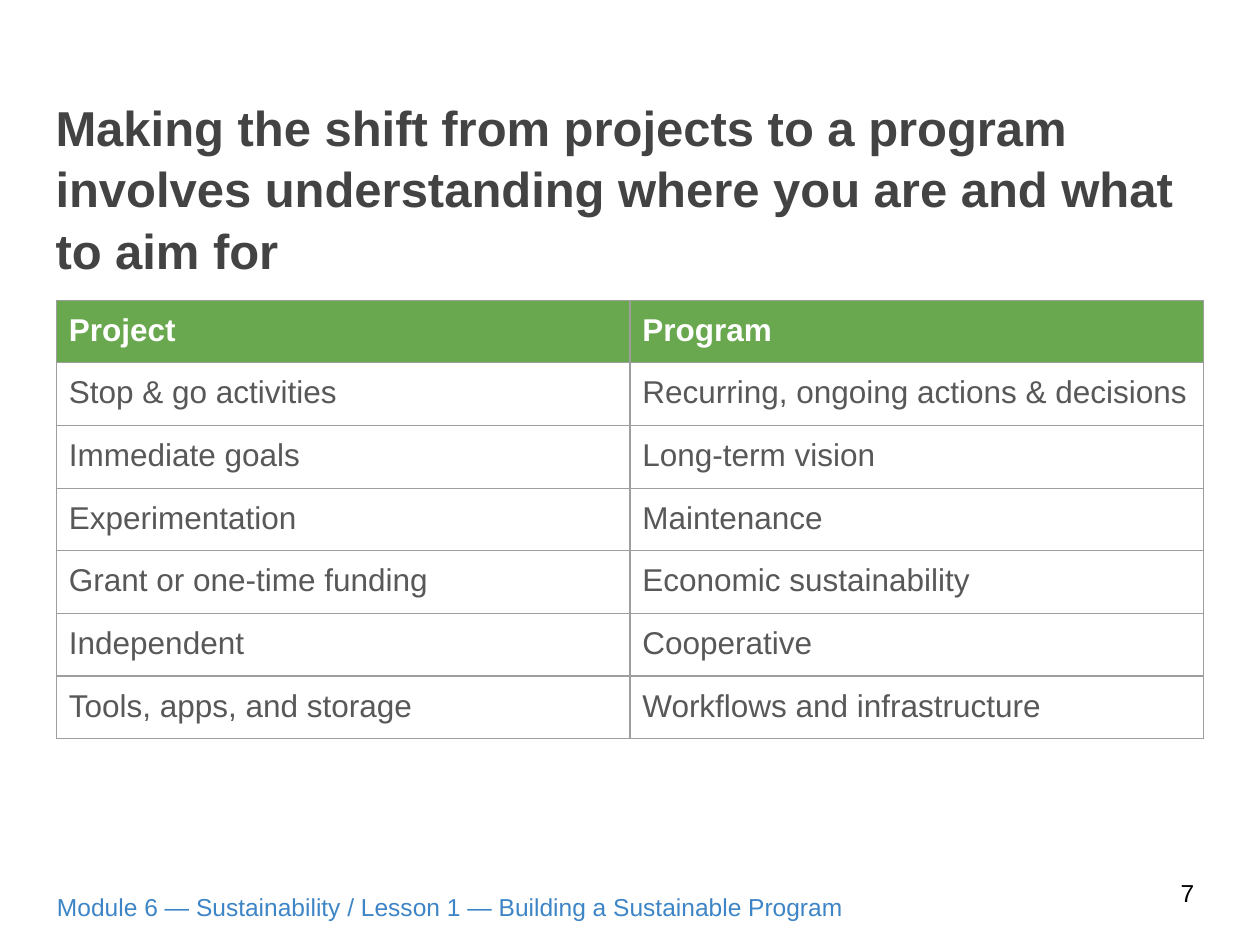
from lxml.etree import SubElement
from pptx import Presentation
from pptx.dml.color import RGBColor
from pptx.enum.text import MSO_ANCHOR as Anchor
from pptx.oxml.ns import qn
from pptx.util import Cm, Pt

WHITE = RGBColor(0xFF, 0xFF, 0xFF)
BLACK = RGBColor(0x00, 0x00, 0x00)
CHARCOAL = RGBColor(0x43, 0x43, 0x43)
GRAY = RGBColor(0x58, 0x58, 0x58)
BORDER = RGBColor(0x9E, 0x9E, 0x9E)
GREEN = RGBColor(0x6A, 0xA8, 0x4F)
BLUE = RGBColor(0x3D, 0x85, 0xC6)

INSET = Cm(0.25)

COMPARISON = [
    ("Project", "Program"),
    ("Stop & go activities", "Recurring, ongoing actions & decisions"),
    ("Immediate goals", "Long-term vision"),
    ("Experimentation", "Maintenance"),
    ("Grant or one-time funding", "Economic sustainability"),
    ("Independent", "Cooperative"),
    ("Tools, apps, and storage", "Workflows and infrastructure"),
]


class SlideBuilder:
    """Holds the style and the current slide."""

    def __init__(self, slide, font="Arial"):
        self.slide = slide
        self.font = font

    def add_run(self, paragraph, text, size, color, bold=False):
        run = paragraph.add_run()
        run.text = text
        run.font.name = self.font
        run.font.size = Pt(size)
        run.font.bold = bold
        run.font.color.rgb = color

    def set_insets(self, holder):
        holder.margin_left = holder.margin_right = INSET
        holder.margin_top = holder.margin_bottom = INSET

    def text(self, box, text, size, color, bold=False, anchor=Anchor.TOP, spacing=1.0):
        frame = self.slide.shapes.add_textbox(*map(Cm, box)).text_frame
        frame.word_wrap = True
        frame.vertical_anchor = anchor
        self.set_insets(frame)
        paragraph = frame.paragraphs[0]
        paragraph.line_spacing = spacing
        self.add_run(paragraph, text, size, color, bold)

    def set_borders(self, cell):
        properties = cell._tc.get_or_add_tcPr()
        for index, side in enumerate(("lnL", "lnR", "lnT", "lnB")):
            line = properties.makeelement(qn(f"a:{side}"), {"w": str(Pt(0.75))})
            fill = SubElement(line, qn("a:solidFill"))
            SubElement(fill, qn("a:srgbClr"), val=str(BORDER))
            properties.insert(index, line)

    def table(self, left, top, column_width, row_height, rows):
        columns = len(rows[0])
        table = self.slide.shapes.add_table(
            len(rows), columns, Cm(left), Cm(top),
            Cm(column_width * columns), Cm(row_height * len(rows))).table
        table.horz_banding = False
        for row_index, texts in enumerate(rows):
            header = row_index == 0
            for column_index, text in enumerate(texts):
                cell = table.cell(row_index, column_index)
                self.set_insets(cell)
                cell.fill.solid()
                cell.fill.fore_color.rgb = GREEN if header else WHITE
                self.set_borders(cell)
                self.add_run(cell.text_frame.paragraphs[0], text, 18,
                             WHITE if header else GRAY, header)


def main():
    presentation = Presentation()
    presentation.slide_width, presentation.slide_height = Cm(25.4), Cm(19.05)
    builder = SlideBuilder(presentation.slides.add_slide(presentation.slide_layouts[6]))

    # Title
    builder.text((0.87, 1.65, 23.67, 2.11),
                 "Making the shift from projects to a program involves "
                 "understanding where you are and what to aim for",
                 28, CHARCOAL, bold=True, spacing=1.05)

    # Comparison table
    builder.table(1.14, 6.05, 11.56, 1.22, COMPARISON)

    # Footer and slide number
    builder.text((0.9, 17.73, 22.99, 1.02),
                 "Module 6 — Sustainability / Lesson 1 — Building a Sustainable Program",
                 14, BLUE)
    builder.text((23.55, 17.27, 1.52, 1.45), "7", 14, BLACK, anchor=Anchor.MIDDLE)

    presentation.save("out.pptx")


if __name__ == "__main__":
    main()
